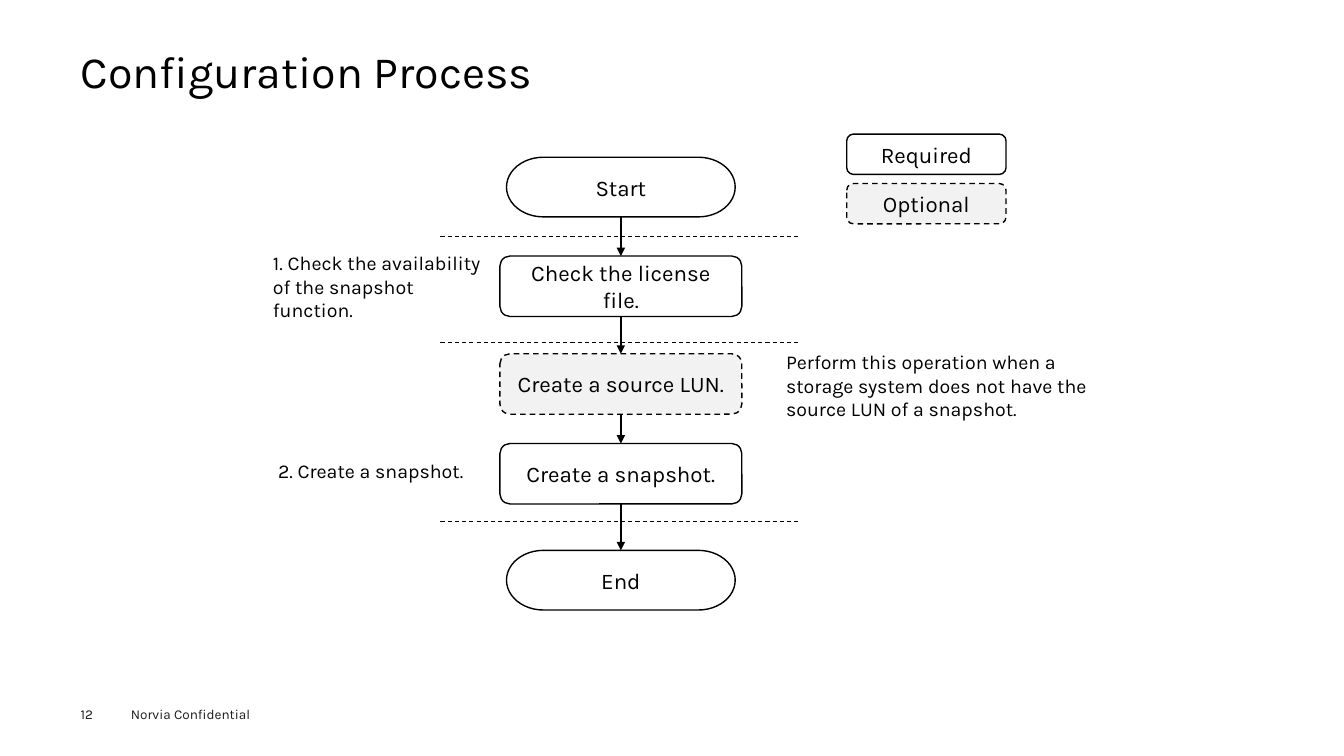
from lxml import etree
from pptx import Presentation
from pptx.dml.color import RGBColor
from pptx.enum import dml, shapes, text
from pptx.oxml import ns
from pptx.util import Pt

BLACK = RGBColor(0, 0, 0)
INK = RGBColor(0x1D, 0x1D, 0x1B)
GRAY = RGBColor(0xF2, 0xF2, 0xF2)
FONT = "Karla"
MID = 443.5
ROUND = shapes.MSO_SHAPE.ROUNDED_RECTANGLE
PILL = shapes.MSO_SHAPE.FLOWCHART_TERMINATOR
DASH = dml.MSO_LINE.DASH
MIDDLE = text.MSO_ANCHOR.MIDDLE
TOP = text.MSO_ANCHOR.TOP


def style(obj, look):
    for name, value in look.items():
        setattr(obj, name, value)


def write(shape, words, size, color=BLACK, frame=None, para=None):
    style(shape.text_frame, {"word_wrap": True, **(frame or {})})
    line = shape.text_frame.paragraphs[0]
    style(line, para or {})
    run = line.add_run()
    run.text = words
    style(run.font, {"name": FONT, "size": Pt(size)})
    run.font.color.rgb = color


def label(slide, words, box, size, color=BLACK, frame=None, para=None):
    shape = slide.shapes.add_textbox(*map(Pt, box))
    write(shape, words, size, color, frame, para)


def stroke(line, width, dash=False):
    line.color.rgb = BLACK
    line.width = Pt(width)
    if dash:
        line.dash_style = DASH


def node(slide, kind, words, box, choice=False):
    shape = slide.shapes.add_shape(kind, *map(Pt, box))
    shape.shadow.inherit = False
    if choice:
        shape.fill.solid()
        shape.fill.fore_color.rgb = GRAY
    else:
        shape.fill.background()
    stroke(shape.line, 1, choice)
    write(shape, words, 16, frame={"vertical_anchor": MIDDLE},
          para={"alignment": text.PP_ALIGN.CENTER})
    return shape


def link(slide, ends, width, dash=False):
    line = slide.shapes.add_connector(shapes.MSO_CONNECTOR.STRAIGHT, *map(Pt, ends))
    stroke(line.line, width, dash)
    etree.SubElement(line._element.spPr, ns.qn("a:effectLst"))
    return line


def arrow(slide, source, target):
    line = link(slide, (0, 0, 0, 0), 1.5)
    line.begin_connect(source, 2)
    line.end_connect(target, 0)
    etree.SubElement(line.line._get_or_add_ln(), ns.qn("a:tailEnd"), type="triangle")


def main():
    deck = Presentation()
    style(deck, {"slide_width": Pt(960), "slide_height": Pt(540)})
    slide = deck.slides.add_slide(deck.slide_layouts[6])

    flat = {f"margin_{side}": 0 for side in ("left", "top", "right", "bottom")}
    label(slide, "Norvia Confidential", (86.4, 500.4, 115.2, 19.4), 9.7, INK)
    label(slide, "12", (57.6, 504, 39.6, 11.5), 9.7, INK, flat)
    label(slide, "Configuration Process", (57.6, 35.3, 844.6, 38.9), 32,
          frame={**flat, "vertical_anchor": TOP}, para={"line_spacing": 0.9})

    for y in (169.2, 244.8, 372.2):
        link(slide, (314.6, y, 572.4, y), 0.75, True)

    steps = (
        (PILL, "Start", 112.3, 163.4, 42.6, False),
        (ROUND, "Check the license file.", 182.9, 172.8, 43.2, False),
        (ROUND, "Create a source LUN.", 252.7, 172.8, 43.2, True),
        (ROUND, "Create a snapshot.", 316.8, 172.8, 43.2, False),
        (PILL, "End", 393.1, 163.4, 42.6, False),
    )
    flow = [node(slide, kind, words, (MID - w / 2, y, w, h), choice)
            for kind, words, y, w, h, choice in steps]
    for source, target in zip(flow, flow[1:]):
        arrow(slide, source, target)

    notes = (
        ("1. Check the availability of the snapshot function.", (187.9, 162.7, 164.9, 83.5), 1),
        ("2. Create a snapshot.", (191.5, 316.1, 164.9, 32.4), 1.5),
        ("Perform this operation when a storage system does not have the "
         "source LUN of a snapshot.", (554.4, 221, 234, 108.7), 1),
    )
    for words, box, space in notes:
        label(slide, words, box, 14, frame={"vertical_anchor": MIDDLE},
              para={"line_spacing": space})

    for row, words in enumerate(("Required", "Optional")):
        node(slide, ROUND, words, (604.8, 95.8 + 35.3 * row, 113.8, 28.8), row == 1)

    deck.save("out.pptx")


if __name__ == "__main__":
    main()
